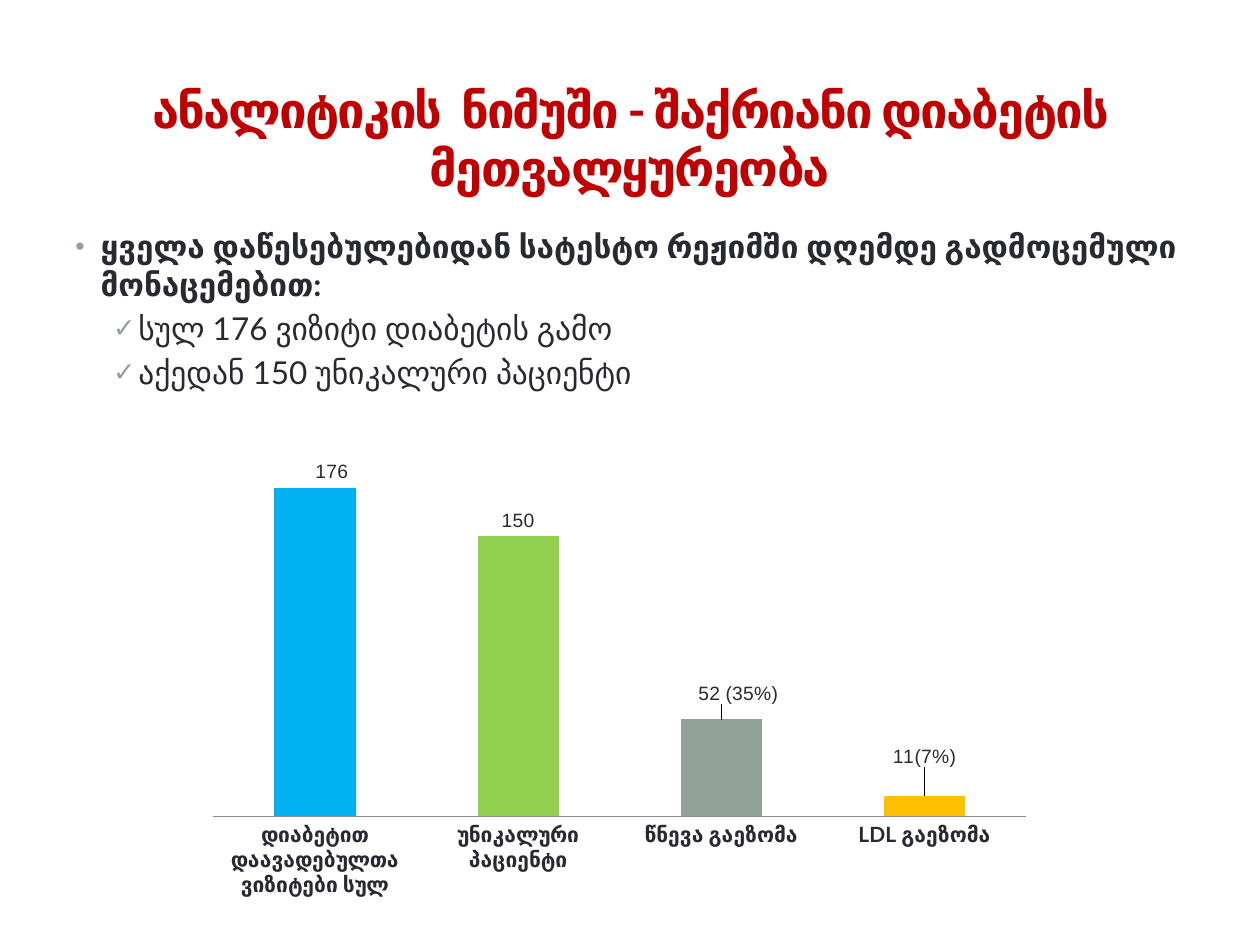
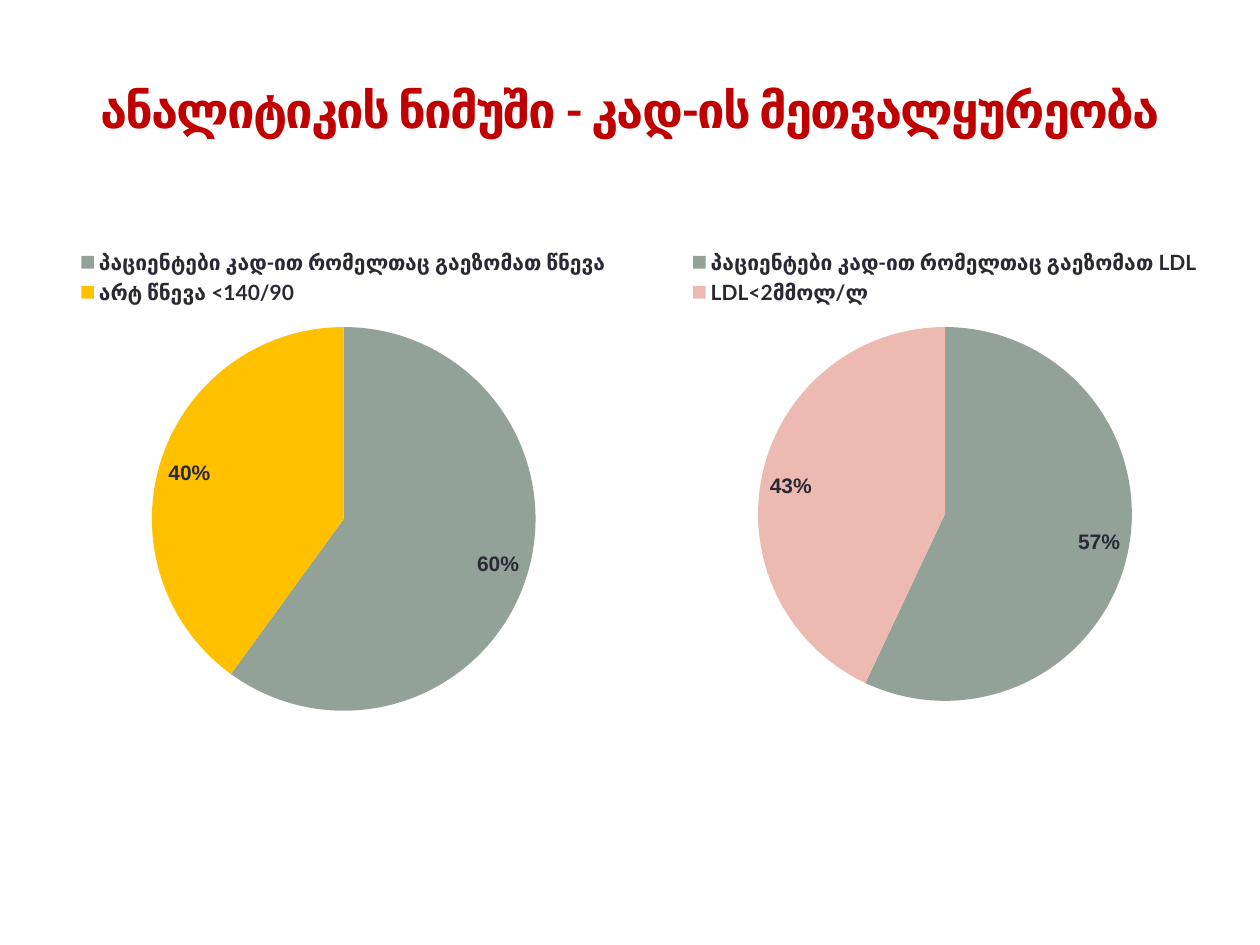
"""Builds two slides of sample analytics on diabetes and heart disease follow-up."""
from lxml import etree
from pptx import Presentation
from pptx import util as u
from pptx.chart import data as chart_data
from pptx.dml.color import RGBColor
from pptx.enum import chart as kinds, text
from pptx.oxml import ns

COLORS = {"title": "C00000", "text": "292934", "sage": "93A299", "blue": "00B0F0",
          "green": "92D050", "amber": "FFC000", "rose": "EDBAB1", "axis": "8C8C8C"}
HEAD_FONT, CHART_FONT = "Lato", "Arial"
SERIES = "Series 1"

TITLES = ["ანალიტიკის  ნიმუში - შაქრიანი დიაბეტის მეთვალყურეობა",
          "ანალიტიკის ნიმუში - კად-ის მეთვალყურეობა"]
POINTS = [
    ("•", 0.51, True, "ყველა დაწესებულებიდან სატესტო რეჟიმში დღემდე გადმოცემული მონაცემებით:"),
    ("✓", 1.27, False, "სულ 176 ვიზიტი დიაბეტის გამო"),
    ("✓", 1.27, False, "აქედან 150 უნიკალური პაციენტი"),
]
BARS = [
    {"name": "დიაბეტით დაავადებულთა ვიზიტები სულ", "value": 176, "color": "blue",
     "shift": (0.02, 0)},
    {"name": "უნიკალური პაციენტი", "value": 150, "color": "green", "shift": (0, 0)},
    {"name": "წნევა გაეზომა", "value": 52, "color": "sage",
     "label": "52 (35%)", "shift": (0.02, -0.02)},
    {"name": "LDL გაეზომა", "value": 11, "color": "amber",
     "label": "11(7%)", "shift": (0, -0.05)},
]
PIES = [
    {"place": (0.58, 4.75, 12.7, 9.93), "slices": [
        {"name": "პაციენტები კად-ით რომელთაც გაეზომათ წნევა", "value": 60, "color": "sage"},
        {"name": "არტ წნევა <140/90", "value": 40, "color": "amber"}]},
    {"place": (12.7, 4.75, 12.7, 9.73), "slices": [
        {"name": "პაციენტები კად-ით რომელთაც გაეზომათ LDL", "value": 57, "color": "sage"},
        {"name": "LDL<2მმოლ/ლ", "value": 43, "color": "rose"}]},
]
TITLE_PLACE = (1.27, 1.47, 22.86, 2.74)
BODY_PLACE = (1.27, 4.45, 22.86, 3.68)
BAR_PLACE = (3.96, 8.74, 17.07, 9.53)
PLOT = {"x": 0.02, "y": 0.02, "w": 0.96, "h": 0.79}


def rgb(name):
    return RGBColor.from_string(COLORS[name])


def style(font, size, bold=False, color="text", face=CHART_FONT):
    font.name, font.size, font.bold = face, u.Pt(size), bold
    font.color.rgb = rgb(color)


def add_text(box, content, first=False, align=text.PP_ALIGN.LEFT, before=0,
             spacing=None, **font):
    frame = box.text_frame
    para = frame.paragraphs[0] if first else frame.add_paragraph()
    para.alignment, para.space_before = align, u.Pt(before)
    span = para.add_run()
    span.text = content
    style(span.font, face=HEAD_FONT, **font)
    if spacing is not None:
        span.font._element.set("spc", str(spacing))
    return para


def add_box(page, place):
    box = page.shapes.add_textbox(*map(u.Cm, place))
    box.text_frame.word_wrap = True
    box.text_frame.vertical_anchor = text.MSO_ANCHOR.TOP
    return box


def add_page(deck, title):
    page = deck.slides.add_slide(deck.slide_layouts[6])
    add_text(add_box(page, TITLE_PLACE), title, first=True, size=28, bold=True,
             color="title", align=text.PP_ALIGN.CENTER, spacing=-100)
    return page


def add_bullet(para, mark, indent):
    props = para._p.get_or_add_pPr()
    props.set("marL", str(u.Cm(indent)))
    props.set("indent", str(-u.Cm(0.51)))
    color = etree.SubElement(props, ns.qn("a:buClr"))
    etree.SubElement(color, ns.qn("a:srgbClr"), val=COLORS["sage"])
    etree.SubElement(props, ns.qn("a:buSzPct"), val="85000")
    etree.SubElement(props, ns.qn("a:buFont"), typeface="Arial")
    etree.SubElement(props, ns.qn("a:buChar"), char=mark)


def manual_layout(inner=False, **values):
    layout = etree.Element(ns.qn("c:layout"))
    manual = etree.SubElement(layout, ns.qn("c:manualLayout"))
    if inner:
        etree.SubElement(manual, ns.qn("c:layoutTarget"), val="inner")
        for mode in ("xMode", "yMode"):
            etree.SubElement(manual, ns.qn(f"c:{mode}"), val="edge")
    for key, value in values.items():
        etree.SubElement(manual, ns.qn(f"c:{key}"), val=str(value))
    return layout


def add_chart(page, kind, place, items, size, bold=False):
    data = chart_data.CategoryChartData()
    data.categories = [item["name"] for item in items]
    data.add_series(SERIES, [item["value"] for item in items])
    chart = page.shapes.add_chart(kind, *map(u.Cm, place), data).chart
    chart.has_title = chart.has_legend = False
    style(chart.font, size, bold)
    plot = chart.plots[0]
    plot.vary_by_categories = kind == kinds.XL_CHART_TYPE.PIE
    plot.has_data_labels = True
    for index, item in enumerate(items):
        fill = plot.series[0].points[index].format.fill
        fill.solid()
        fill.fore_color.rgb = rgb(item["color"])
    return chart


def add_bars(page):
    chart = add_chart(page, kinds.XL_CHART_TYPE.COLUMN_CLUSTERED, BAR_PLACE, BARS, 10)
    plot = chart.plots[0]
    plot.gap_width = 150
    area = chart._chartSpace.chart.plotArea
    for old in area.findall(ns.qn("c:layout")):
        area.remove(old)
    area.insert(0, manual_layout(inner=True, **PLOT))

    values, names = chart.value_axis, chart.category_axis
    values.minimum_scale, values.maximum_scale = 0, 200
    values.has_major_gridlines = values.visible = False
    names.major_tick_mark = kinds.XL_TICK_MARK.NONE
    names.format.line.color.rgb = rgb("axis")
    style(names.tick_labels.font, 12, True, face=HEAD_FONT)

    plot.data_labels.show_value = True
    style(plot.data_labels.font, 11)
    for index, bar in enumerate(BARS):
        label = plot.series[0].points[index].data_label
        if "label" in bar:
            span = label.text_frame.paragraphs[0].add_run()
            span.text = bar["label"]
            style(span.font, 11)
        else:
            style(label.font, 11)
        label.position = kinds.XL_LABEL_POSITION.OUTSIDE_END
        x, y = bar["shift"]
        label._dLbl.insert(1, manual_layout(x=x, y=y))


def add_pie(page, place, slices):
    chart = add_chart(page, kinds.XL_CHART_TYPE.PIE, place, slices, 12, True)
    chart.has_legend = True
    chart.legend.position = kinds.XL_LEGEND_POSITION.TOP
    chart.legend.include_in_layout = False
    style(chart.legend.font, 12, True, face=HEAD_FONT)
    labels = chart.plots[0].data_labels
    labels.show_value, labels.show_percentage = False, True
    labels.number_format, labels.number_format_is_linked = "0%", False
    labels.position = kinds.XL_LABEL_POSITION.INSIDE_END
    style(labels.font, 12, True)


def main():
    deck = Presentation()
    deck.slide_width, deck.slide_height = u.Cm(25.4), u.Cm(19.05)
    diabetes, heart = [add_page(deck, title) for title in TITLES]
    body = add_box(diabetes, BODY_PLACE)
    for index, (mark, indent, bold, content) in enumerate(POINTS):
        para = add_text(body, content, first=index == 0, size=18, bold=bold, before=3.6)
        add_bullet(para, mark, indent)
    add_bars(diabetes)
    for pie in PIES:
        add_pie(heart, **pie)
    deck.save("out.pptx")


if __name__ == "__main__":
    main()
